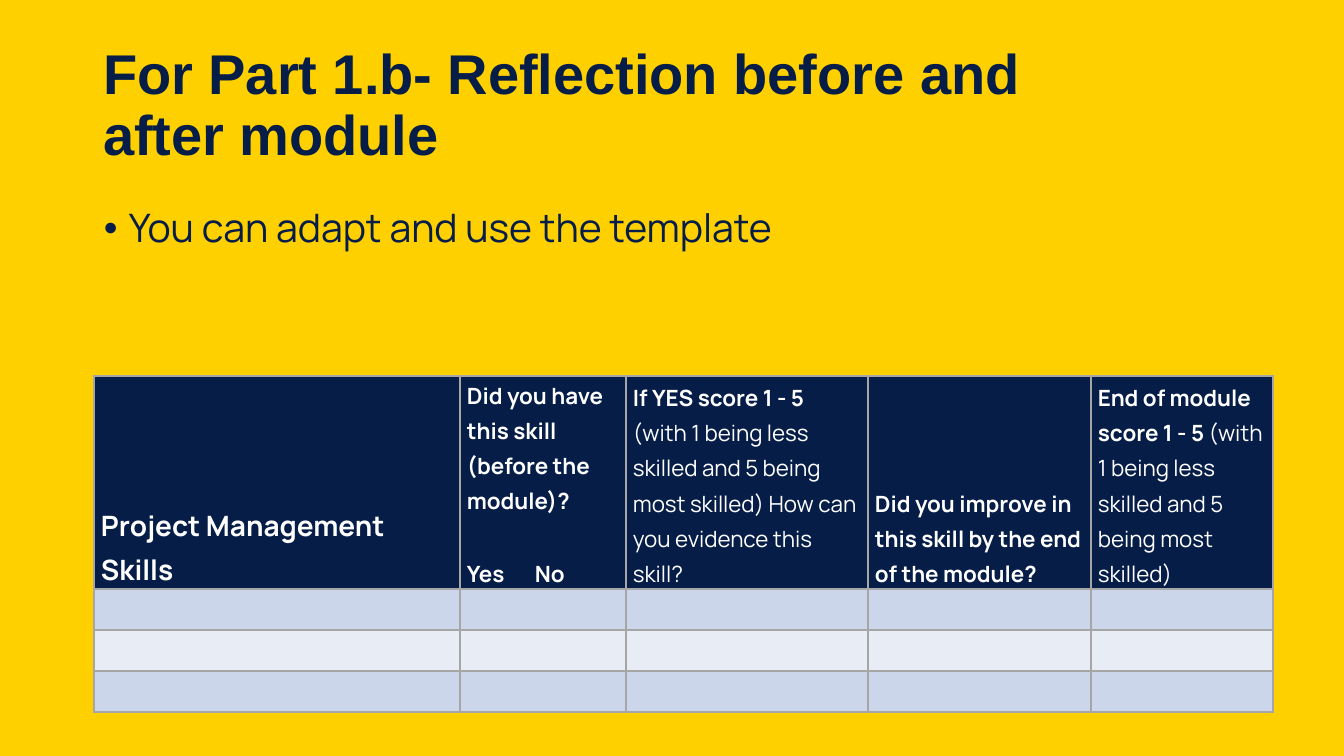
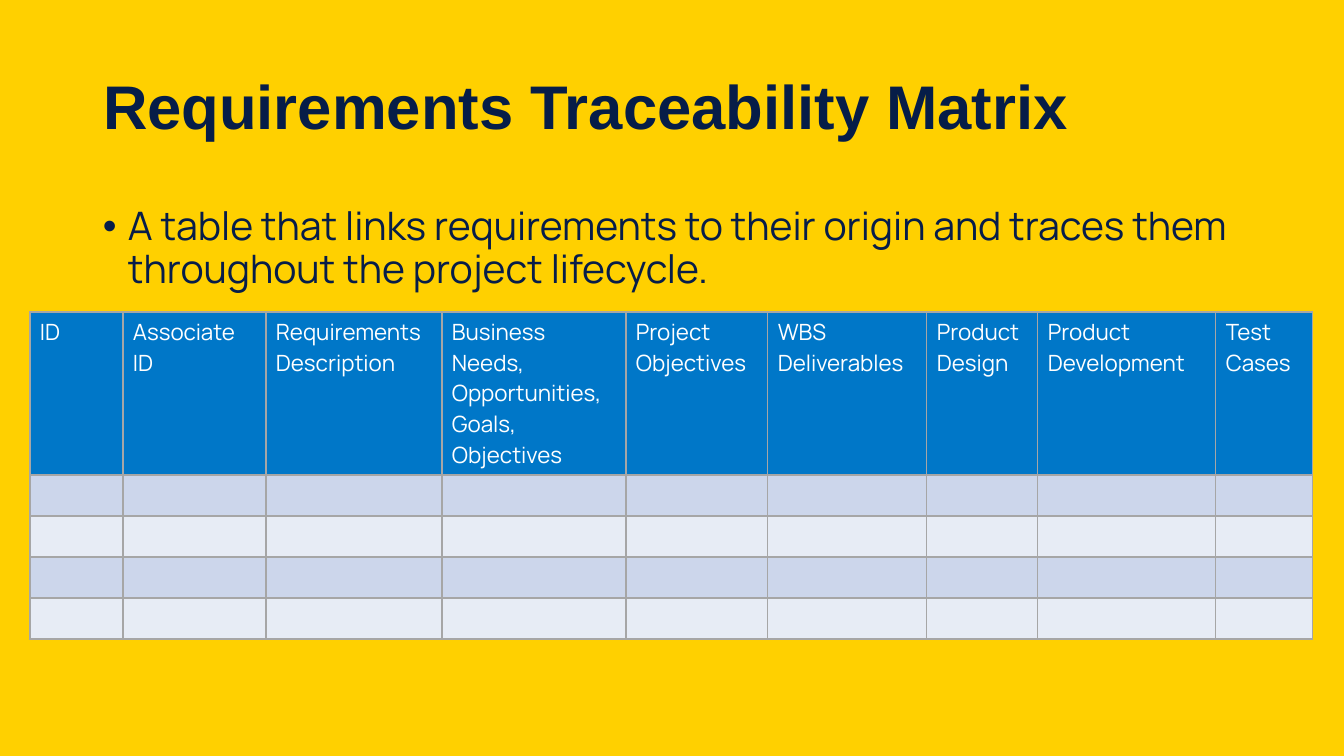
from lxml import etree
from pptx import Presentation
from pptx.dml.color import RGBColor
from pptx.enum.text import MSO_ANCHOR, MSO_AUTO_SIZE, PP_ALIGN
from pptx.oxml.ns import qn
from pptx.util import Pt

# Shared scale, colours and fonts
EMU_PER_INCH = 914400
PX_PER_INCH = 100.8
SLIDE_WIDTH, SLIDE_HEIGHT = 1344, 756

YELLOW = RGBColor(0xFF, 0xD0, 0x00)
TITLE_NAVY = RGBColor(0x06, 0x1D, 0x48)
BODY_NAVY = RGBColor(0x07, 0x1D, 0x49)
BLUE = RGBColor(0x00, 0x77, 0xC8)
WHITE = RGBColor(0xFF, 0xFF, 0xFF)
BORDER_GREY = RGBColor(0xA6, 0xA6, 0xA6)
BAND_COLOURS = (RGBColor(0xCC, 0xD6, 0xEB), RGBColor(0xE7, 0xEC, 0xF5))

TITLE_FONT = "Arial"
BODY_FONT = "Manrope"

MIDDLE, TOP, BOTTOM = MSO_ANCHOR.MIDDLE, MSO_ANCHOR.TOP, MSO_ANCHOR.BOTTOM
LEFT = PP_ALIGN.LEFT
NO_AUTOFIT = MSO_AUTO_SIZE.NONE
TITLE_ONLY = 5

ROW_HEIGHT = 41
INDENT = 25
ANSWER_TAB = 68
ANSWER_GAP = Pt(27)

# Header cells: a list of paragraphs, each a list of (text, bold) runs
SKILLS_HEADER = [
    [[("Project Management Skills", True)]],
    [[("Did you have this skill (before the module)?", True)], [("Yes\tNo", True)]],
    [[("If YES score 1 - 5 ", True),
      ("(with 1 being less skilled and 5 being most skilled) "
       "How can you evidence this skill?", False)]],
    [[("Did you improve in this skill by the end of the module?", True)]],
    [[("End of module score 1 - 5 ", True),
      ("(with 1 being less skilled and 5 being most skilled)", False)]],
]
MATRIX_LABELS = [
    "ID", "Associate ID", "Requirements Description",
    "Business Needs, Opportunities, Goals, Objectives", "Project Objectives",
    "WBS Deliverables", "Product Design", "Product Development", "Test Cases",
]


def px(length):
    return round(length * EMU_PER_INCH / PX_PER_INCH)


def style_font(font, name, size, colour, bold=False):
    font.name = name
    font.size = Pt(size)
    font.color.rgb = colour
    font.bold = bold


def add_titled_slide(presentation, title, box, size):
    slide = presentation.slides.add_slide(presentation.slide_layouts[TITLE_ONLY])
    shape = slide.shapes.title
    shape.left, shape.top, shape.width, shape.height = map(px, box)
    frame = shape.text_frame
    frame.text = title
    frame.word_wrap = True
    frame.auto_size = NO_AUTOFIT
    frame.vertical_anchor = MIDDLE
    paragraph = frame.paragraphs[0]
    paragraph.alignment = LEFT
    paragraph.line_spacing = 0.9
    style_font(paragraph.runs[0].font, TITLE_FONT, size, TITLE_NAVY, True)
    return slide


def add_bullet(slide, text, box):
    frame = slide.shapes.add_textbox(*map(px, box)).text_frame
    frame.word_wrap = True
    paragraph = frame.paragraphs[0]
    paragraph.text = text
    properties = paragraph._p.get_or_add_pPr()
    properties.set("marL", str(px(INDENT)))
    properties.set("indent", str(-px(INDENT)))
    etree.SubElement(properties, qn("a:buFont"), typeface=TITLE_FONT)
    etree.SubElement(properties, qn("a:buChar"), char="•")
    paragraph.line_spacing = 0.9
    style_font(paragraph.runs[0].font, BODY_FONT, 28, BODY_NAVY)


def add_tab_stop(paragraph, position):
    tabs = etree.SubElement(paragraph._p.get_or_add_pPr(), qn("a:tabLst"))
    etree.SubElement(tabs, qn("a:tab"), pos=str(px(position)), algn="l")


def paint_cell(cell, colour):
    properties = cell._tc.get_or_add_tcPr()
    for side in ("lnL", "lnR", "lnT", "lnB"):
        line = etree.SubElement(properties, qn(f"a:{side}"), w=str(Pt(1)))
        fill = etree.SubElement(line, qn("a:solidFill"))
        etree.SubElement(fill, qn("a:srgbClr"), val=str(BORDER_GREY))
    cell.fill.solid()
    cell.fill.fore_color.rgb = colour


def fill_header_cell(cell, paragraphs, size, line_spacing):
    frame = cell.text_frame
    for index, runs in enumerate(paragraphs):
        paragraph = frame.add_paragraph() if index else frame.paragraphs[0]
        if any("\t" in text for text, _ in runs):
            add_tab_stop(paragraph, ANSWER_TAB)
        paragraph.line_spacing = line_spacing
        if index:
            paragraph.space_before = ANSWER_GAP
        for text, bold in runs:
            run = paragraph.add_run()
            run.text = text
            style_font(run.font, BODY_FONT, size, WHITE, bold)


def add_banded_table(slide, origin, widths, header_height, row_count, header,
                     header_colour, first_size=16, line_spacing=1.0,
                     anchor=TOP, margins=(10, 5)):
    heights = [header_height] + [ROW_HEIGHT] * row_count
    box = (*origin, sum(widths), sum(heights))
    table = slide.shapes.add_table(len(heights), len(widths), *map(px, box)).table
    table.horz_banding = False
    for column, width in zip(table.columns, widths):
        column.width = px(width)
    for row_index, (row, height) in enumerate(zip(table.rows, heights)):
        row.height = px(height)
        band = BAND_COLOURS[(row_index - 1) % 2]
        for cell in row.cells:
            paint_cell(cell, band if row_index else header_colour)
    for index, (cell, paragraphs) in enumerate(zip(table.rows[0].cells, header)):
        cell.vertical_anchor = anchor
        cell.margin_left = cell.margin_right = px(margins[0])
        cell.margin_top = cell.margin_bottom = px(margins[1])
        fill_header_cell(cell, paragraphs, 16 if index else first_size, line_spacing)


def build_reflection_slide(presentation):
    slide = add_titled_slide(
        presentation, "For Part 1.b- Reflection before and after module",
        (93, 34, 990, 146), 40)
    add_bullet(slide, "You can adapt and use the template", (94, 204, 1159, 110))
    add_banded_table(
        slide, (94, 376), [366, 166, 242, 223, 182], 213, 3, SKILLS_HEADER,
        TITLE_NAVY, first_size=20, line_spacing=1.15, anchor=BOTTOM, margins=(7, 0))


def build_matrix_slide(presentation):
    slide = add_titled_slide(
        presentation, "Requirements Traceability Matrix", (93, 37, 1061, 146), 44)
    add_bullet(
        slide,
        "A table that links requirements to their origin and traces them "
        "throughout the project lifecycle.",
        (93, 202, 1159, 100))
    add_banded_table(
        slide, (30, 312), [93, 143, 176, 184, 142, 159, 111, 178, 97], 163, 4,
        [[[(label, False)]] for label in MATRIX_LABELS], BLUE)


def main():
    presentation = Presentation()
    presentation.slide_width = px(SLIDE_WIDTH)
    presentation.slide_height = px(SLIDE_HEIGHT)
    background = presentation.slide_master.background.fill
    background.solid()
    background.fore_color.rgb = YELLOW
    build_reflection_slide(presentation)
    build_matrix_slide(presentation)
    presentation.save("out.pptx")


if __name__ == "__main__":
    main()
